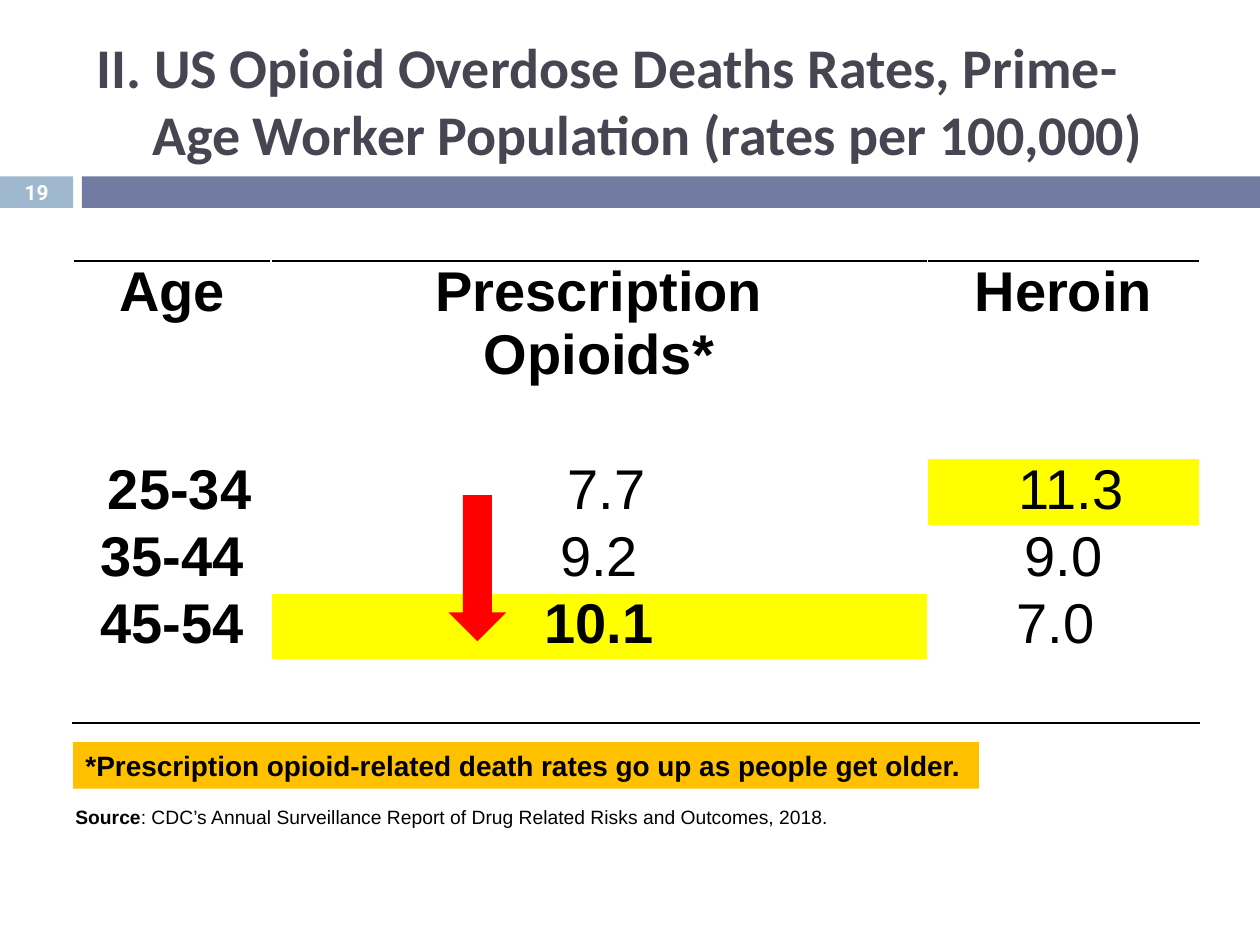
from dataclasses import dataclass

import pptx
import pptx.dml.color
import pptx.enum.shapes
import pptx.enum.text
import pptx.oxml
import pptx.oxml.ns
import pptx.util

SHAPE = pptx.enum.shapes.MSO_SHAPE
ALIGN = pptx.enum.text.PP_ALIGN
ANCHOR = pptx.enum.text.MSO_ANCHOR
INCH = pptx.util.Inches


@dataclass(frozen=True)
class Theme:
    title: str = "464653"
    band: str = "727CA3"
    badge: str = "9FB8CD"
    ink: str = "000000"
    white: str = "FFFFFF"
    mark: str = "FFFF00"
    note: str = "FFC000"
    arrow: str = "FF0000"
    head: str = "Calibri"
    body: str = "Arial"
    digit: str = "Roboto"
    large: float = 32
    mid: float = 16
    page: float = 11.9
    small: float = 11


def color(code):
    return pptx.dml.color.RGBColor.from_string(code)


class Deck:
    """Places elements on a grid of 100 columns by 75 rows."""

    def __init__(self, theme):
        self.theme = theme
        self.file = pptx.Presentation()
        self.file.slide_width, self.file.slide_height = INCH(10), INCH(7.5)
        self.cell = self.file.slide_width / 100
        self.slide = self.file.slides.add_slide(self.file.slide_layouts[6])

    def span(self, *units):
        return [round(u * self.cell) for u in units]

    def style(self, run, size, bold=True, tone=None, face=None):
        font = run.font
        font.size, font.bold = pptx.util.Pt(size), bold
        font.name = face or self.theme.body
        font.color.rgb = color(tone or self.theme.ink)

    def shape(self, kind, box, fill):
        item = self.slide.shapes.add_shape(kind, *self.span(*box))
        item.shadow.inherit = False
        item.fill.solid()
        item.fill.fore_color.rgb = color(fill)
        item.line.fill.background()
        return item

    def label(self, item, text, size, align=ALIGN.LEFT, **look):
        frame = item.text_frame
        frame.word_wrap = True
        frame.vertical_anchor = ANCHOR.MIDDLE
        frame.text = text
        para = frame.paragraphs[0]
        para.alignment = align
        for run in para.runs:
            self.style(run, size, **look)
        return para

    def text(self, box, text, size, **look):
        item = self.slide.shapes.add_textbox(*self.span(*box))
        return self.label(item, text, size, **look)

    def rule(self, cell, side):
        """Draw a 1 pt line on the T or B side of a table cell."""
        cell._tc.get_or_add_tcPr().append(pptx.oxml.parse_xml(
            f'<a:ln{side} {pptx.oxml.ns.nsdecls("a")} w="12700"><a:solidFill>'
            f'<a:srgbClr val="{self.theme.ink}"/></a:solidFill></a:ln{side}>'))

    def table(self, box, cols, rows, data, bold, marks, rules):
        grid = self.slide.shapes.add_table(
            len(rows), len(cols), *self.span(*box)).table
        grid.first_row = grid.horz_banding = False
        for col, width in zip(grid.columns, self.span(*cols)):
            col.width = width
        for row, height in zip(grid.rows, self.span(*rows)):
            row.height = height
        for r, line in enumerate(data):
            for c, value in enumerate(line):
                cell = grid.cell(r, c)
                cell.margin_left = cell.margin_right = INCH(0.07)
                cell.margin_top = cell.margin_bottom = 0
                for side in rules.get(r, ""):
                    self.rule(cell, side)
                if (r, c) in marks:
                    cell.fill.solid()
                    cell.fill.fore_color.rgb = color(self.theme.mark)
                else:
                    cell.fill.background()
                if value:
                    cell.text_frame.text = value
                    para = cell.text_frame.paragraphs[0]
                    para.alignment = ALIGN.CENTER
                    for run in para.runs:
                        self.style(run, self.theme.large, bold(r, c))


def main():
    theme = Theme()
    deck = Deck(theme)

    badge = deck.shape(SHAPE.RECTANGLE, (0, 14, 5.8, 2.5), theme.badge)
    deck.label(badge, "19", theme.page, align=ALIGN.CENTER,
               tone=theme.white, face=theme.digit)
    deck.shape(SHAPE.RECTANGLE, (6.5, 14, 93.5, 2.5), theme.band)

    title = deck.text(
        (6.7, 2.5, 89.2, 10.8),
        "II. US Opioid Overdose Deaths Rates, Prime-Age Worker Population "
        "(rates per 100,000)",
        theme.large, tone=theme.title, face=theme.head)
    hang = INCH(0.44)
    props = title._p.get_or_add_pPr()
    props.set("marL", str(hang))
    props.set("indent", str(-hang))

    data = [
        ("Age", "Prescription\vOpioids*", "Heroin"),
        ("", "", ""),
        (" 25-34", " 7.7", " 11.3"),
        ("35-44", "9.2", "9.0"),
        ("45-54", "10.1", "7.0 "),
        ("", "", ""),
    ]
    deck.table((5.8, 20.7, 89.4, 34.9), (15.7, 52.1, 21.6), [9.9] + [5] * 5,
               data, bold=lambda r, c: r == 0 or c == 0 or (r, c) == (4, 1),
               marks={(2, 2), (4, 1)}, rules={0: "TB", 5: "B"})

    note = deck.shape(SHAPE.RECTANGLE, (5.8, 58.9, 71.9, 3.7), theme.note)
    deck.label(
        note,
        "*Prescription opioid-related death rates go up as people get older.",
        theme.mid)
    deck.shape(SHAPE.DOWN_ARROW, (35.6, 39.3, 4.6, 11.6), theme.arrow)

    source = deck.text((5, 63.4, 63, 2.9), "Source", theme.small)
    tail = source.add_run()
    tail.text = (": CDC’s Annual Surveillance Report of Drug Related Risks "
                 "and Outcomes, 2018.")
    deck.style(tail, theme.small, bold=False)

    deck.file.save("out.pptx")


if __name__ == "__main__":
    main()
